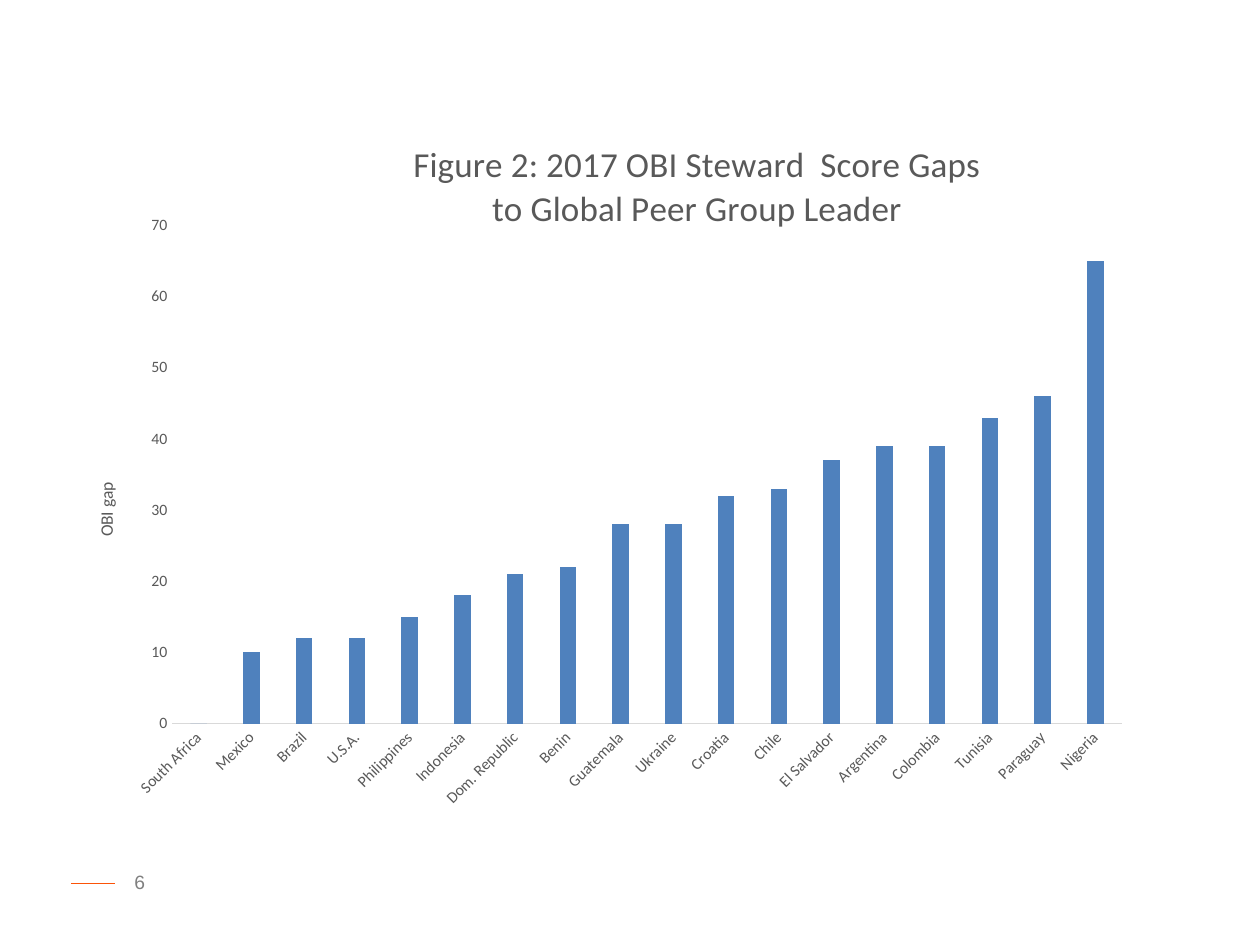
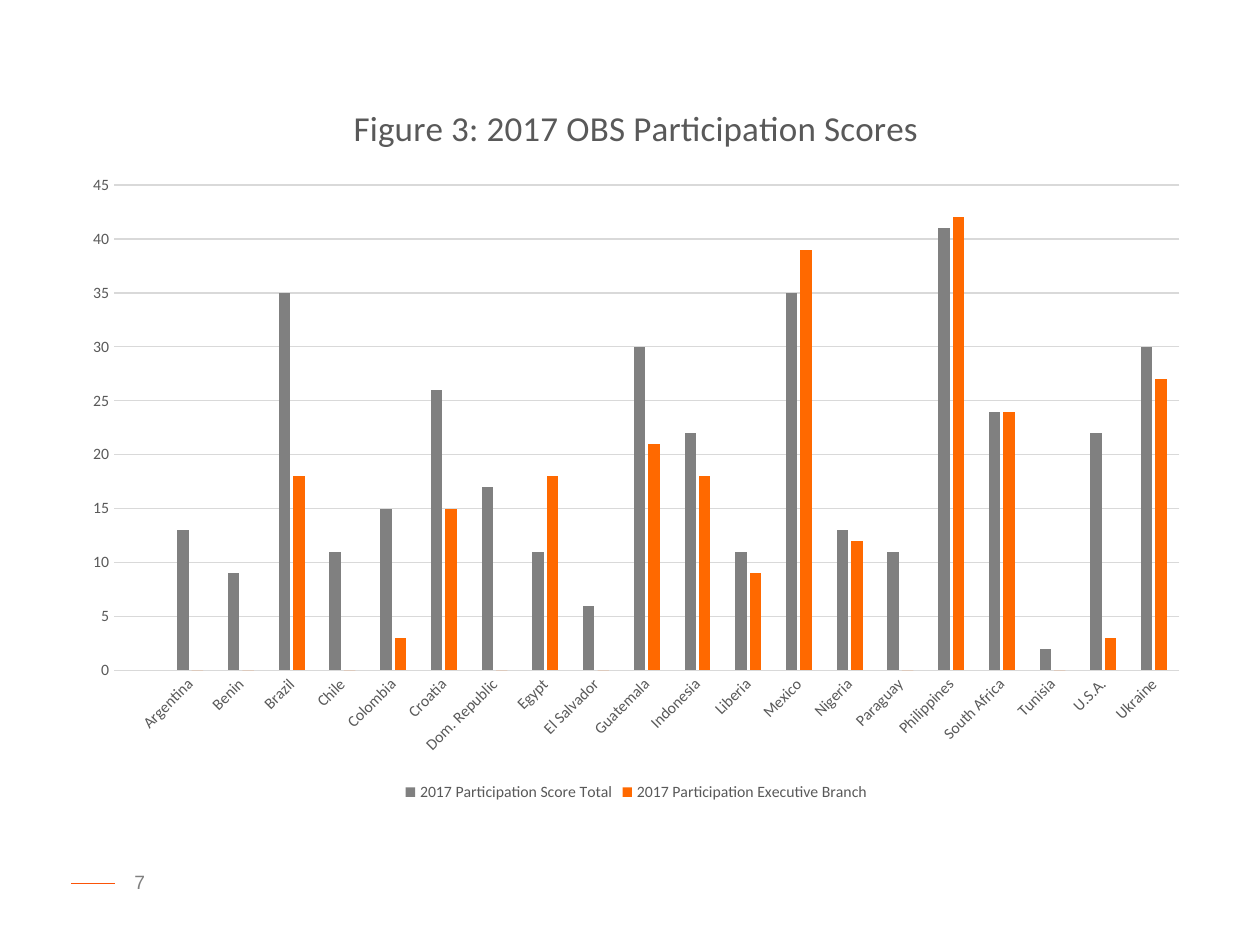
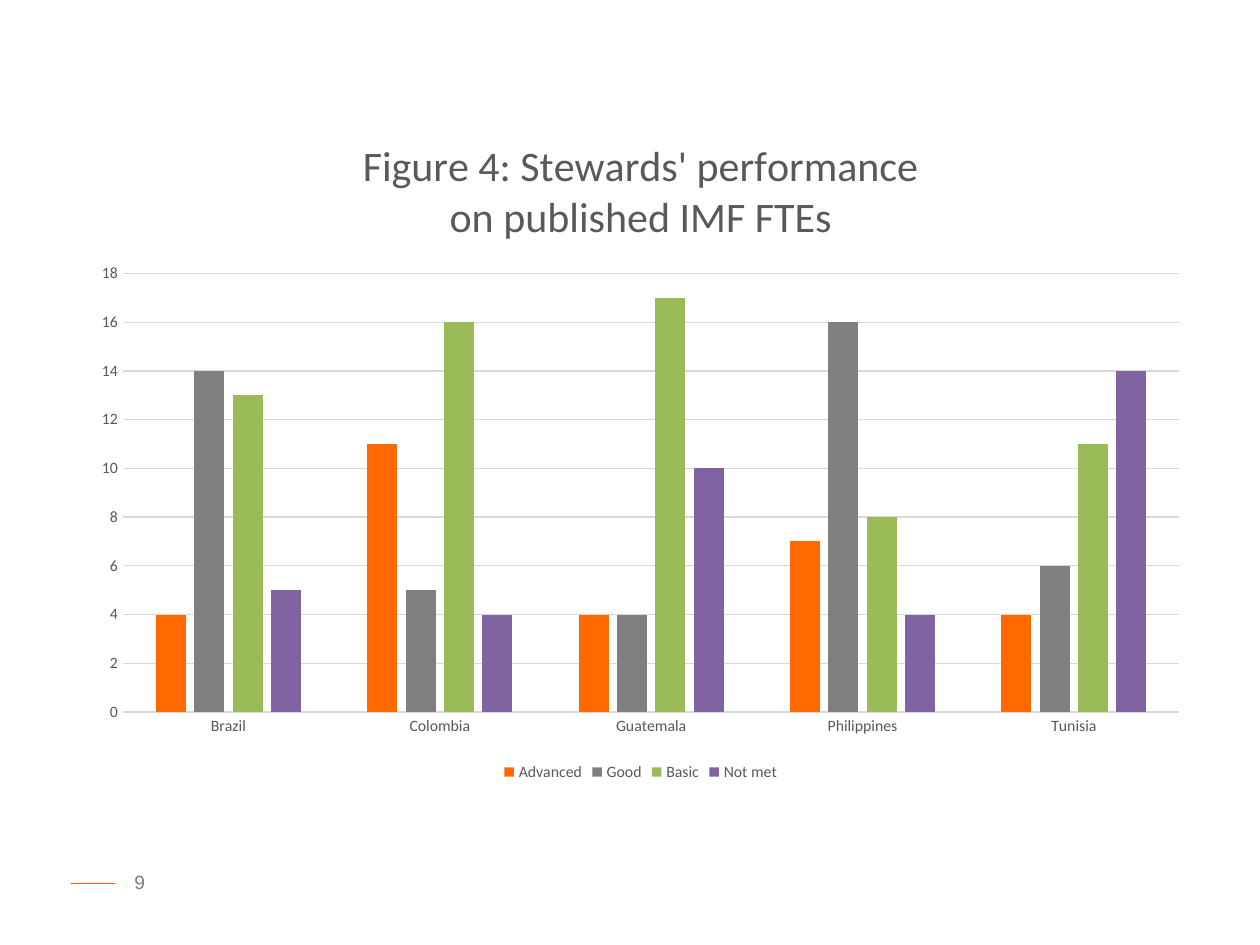
from lxml import etree
from pptx import Presentation
from pptx.chart.data import CategoryChartData
from pptx.dml.color import RGBColor
from pptx.enum import chart as ch, shapes, text
from pptx.oxml import ns
from pptx.util import Inches, Pt

WHITE = RGBColor(0xFF, 0xFF, 0xFF)
INK = RGBColor(0x59, 0x59, 0x59)
NUMBER_GRAY = RGBColor(0x7F, 0x7F, 0x7F)
RULE_GRAY = RGBColor(0xD9, 0xD9, 0xD9)
ACCENT = RGBColor(0xFB, 0x53, 0x08)
BLUE = RGBColor(0x4F, 0x81, 0xBD)
GRAY = RGBColor(0x80, 0x80, 0x80)
ORANGE = RGBColor(0xFF, 0x69, 0x00)
GREEN = RGBColor(0x9B, 0xBB, 0x59)
PURPLE = RGBColor(0x80, 0x64, 0xA2)

GAP_COUNTRIES = [
    "South Africa", "Mexico", "Brazil", "U.S.A.", "Philippines", "Indonesia",
    "Dom. Republic", "Benin", "Guatemala", "Ukraine", "Croatia", "Chile",
    "El Salvador", "Argentina", "Colombia", "Tunisia", "Paraguay", "Nigeria"]
GAPS = [0, 10, 12, 12, 15, 18, 21, 22, 28, 28, 32, 33, 37, 39, 39, 43, 46, 65]

OBS_COUNTRIES = [
    "", "Argentina", "Benin", "Brazil", "Chile", "Colombia", "Croatia",
    "Dom. Republic", "Egypt", "El Salvador", "Guatemala", "Indonesia",
    "Liberia", "Mexico", "Nigeria", "Paraguay", "Philippines",
    "South Africa", "Tunisia", "U.S.A.", "Ukraine"]
TOTAL_SCORES = [None, 13, 9, 35, 11, 15, 26, 17, 11, 6, 30, 22, 11, 35, 13,
                11, 41, 24, 2, 22, 30]
EXECUTIVE_SCORES = [None, 0, 0, 18, 0, 3, 15, 0, 18, 0, 21, 18, 9, 39, 12,
                    0, 42, 24, 0, 3, 27]

FTE_COUNTRIES = ["Brazil", "Colombia", "Guatemala", "Philippines", "Tunisia"]


def set_font(font, size, color=INK, name="Calibri"):
    for key, value in {"size": Pt(size), "name": name, "bold": False}.items():
        setattr(font, key, value)
    font.color.rgb = color


def set_line(line, color):
    line.color.rgb = color
    line.width = Pt(0.75)


def set_layout(element, index, **places):
    for old in element.findall(ns.qn("c:layout")):
        element.remove(old)
    layout = etree.Element(ns.qn("c:layout"))
    manual = etree.SubElement(layout, ns.qn("c:manualLayout"))
    for tag, value in places.items():
        etree.SubElement(manual, ns.qn("c:" + tag)).set("val", str(value))
    element.insert(index, layout)


def write_title(title, words, size):
    tf = title.text_frame
    tf.text = words
    for p in tf.paragraphs:
        for r in p.runs:
            set_font(r.font, size)


def add_footer(s, number):
    box = s.shapes.add_textbox(Inches(0.5), Inches(6.86), Inches(0.75), Inches(0.4))
    tf = box.text_frame
    tf.word_wrap = True
    p = tf.paragraphs[0]
    p.alignment = text.PP_ALIGN.RIGHT
    r = p.add_run()
    r.text = str(number)
    set_font(r.font, 11, NUMBER_GRAY, "Arial")
    dash = s.shapes.add_connector(shapes.MSO_CONNECTOR.STRAIGHT,
                                  Inches(0.91), Inches(7.01), Inches(0.56), Inches(7.01))
    set_line(dash.line, ACCENT)
    etree.SubElement(dash._element.spPr, ns.qn("a:effectLst"))


def style_axes(chart, top, step, gridlines, slanted):
    cat, val = chart.category_axis, chart.value_axis
    for axis in (cat, val):
        axis.major_tick_mark = axis.minor_tick_mark = ch.XL_TICK_MARK.NONE
        axis.has_major_gridlines = False
        set_font(axis.tick_labels.font, 9)
    set_line(cat.format.line, RULE_GRAY)
    val.format.line.fill.background()
    scale = {"minimum_scale": 0, "maximum_scale": top, "major_unit": step,
             "has_major_gridlines": gridlines}
    for key, value in scale.items():
        setattr(val, key, value)
    if gridlines:
        set_line(val.major_gridlines.format.line, RULE_GRAY)
    if slanted:
        body = cat._element.find(ns.qn("c:txPr")).find(ns.qn("a:bodyPr"))
        body.set("rot", "-2700000")
        body.set("vert", "horz")


def add_columns(s, place, title, size, countries, series, top, step,
                gridlines=True, slanted=False):
    data = CategoryChartData()
    data.categories = countries
    for name, values, _ in series:
        data.add_series(name, values)
    chart = s.shapes.add_chart(ch.XL_CHART_TYPE.COLUMN_CLUSTERED,
                               *map(Inches, place), data).chart
    set_font(chart.font, 10)
    chart.has_title = True
    write_title(chart.chart_title, title, size)
    plot = chart.plots[0]
    for key, value in {"gap_width": 219, "overlap": -27,
                       "vary_by_categories": False}.items():
        setattr(plot, key, value)
    for bars, (_, _, color) in zip(plot.series, series):
        bars.format.fill.solid()
        bars.format.fill.fore_color.rgb = color
        bars.invert_if_negative = False
    style_axes(chart, top, step, gridlines, slanted)
    chart.has_legend = len(series) > 1
    if chart.has_legend:
        chart.legend.position = ch.XL_LEGEND_POSITION.BOTTOM
        chart.legend.include_in_layout = False
        set_font(chart.legend.font, 9)
    return chart


def place_gap_parts(chart):
    axis_title = chart.value_axis.axis_title
    write_title(axis_title, "OBI gap", 10)
    body = axis_title.text_frame._txBody.find(ns.qn("a:bodyPr"))
    body.set("rot", "-5400000")
    body.set("vert", "horz")
    set_layout(axis_title._element, 1, xMode="edge", yMode="edge", x=0.02, y=0.51)
    set_layout(chart.chart_title._element, 1, xMode="edge", yMode="edge", x=0.32, y=0.02)
    plot_area = chart._chartSpace.find(ns.qn("c:chart")).find(ns.qn("c:plotArea"))
    set_layout(plot_area, 0, layoutTarget="inner", xMode="edge", yMode="edge",
               x=0.096, y=0.146, w=0.896, h=0.714)


def add_slide(prs, number):
    s = prs.slides.add_slide(prs.slide_layouts[6])
    s.background.fill.solid()
    s.background.fill.fore_color.rgb = WHITE
    add_footer(s, number)
    return s


def main():
    prs = Presentation()
    prs.slide_width, prs.slide_height = Inches(10), Inches(7.5)

    gaps = add_columns(
        add_slide(prs, 6), (0.56, 0.98, 8.41, 5.54),
        "Figure 2: 2017 OBI Steward  Score Gaps\nto Global Peer Group Leader", 20,
        GAP_COUNTRIES, [("Series 1", GAPS, BLUE)], 70, 10,
        gridlines=False, slanted=True)
    place_gap_parts(gaps)

    add_columns(
        add_slide(prs, 7), (0.56, 0.6, 8.98, 5.8),
        "Figure 3: 2017 OBS Participation Scores", 20, OBS_COUNTRIES,
        [("2017 Participation Score Total", TOTAL_SCORES, GRAY),
         ("2017 Participation Executive Branch", EXECUTIVE_SCORES, ORANGE)],
        45, 5, slanted=True)

    add_columns(
        add_slide(prs, 9), (0.63, 0.92, 8.91, 5.32),
        "Figure 4: Stewards' performance\non published IMF FTEs", 24, FTE_COUNTRIES,
        [("Advanced", [4, 11, 4, 7, 4], ORANGE),
         ("Good", [14, 5, 4, 16, 6], GRAY),
         ("Basic", [13, 16, 17, 8, 11], GREEN),
         ("Not met", [5, 4, 10, 4, 14], PURPLE)],
        18, 2)

    prs.save("out.pptx")


if __name__ == "__main__":
    main()
